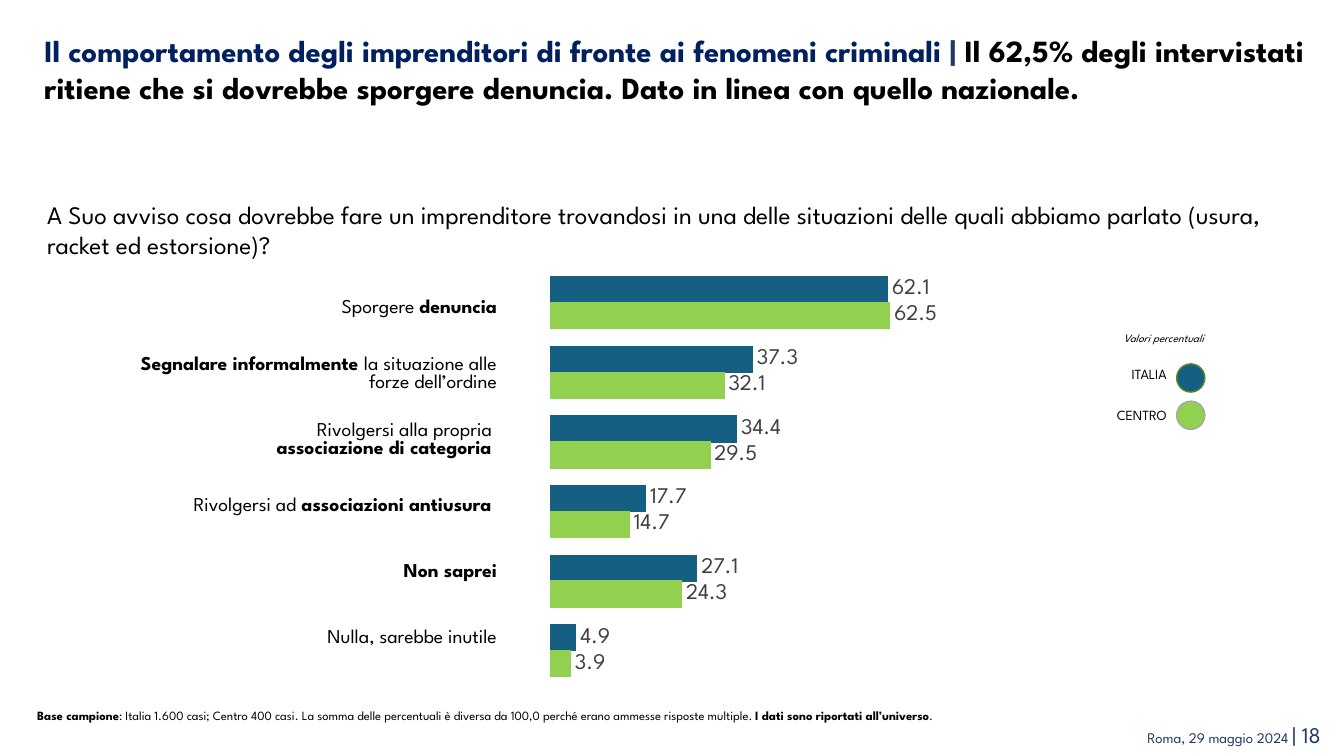
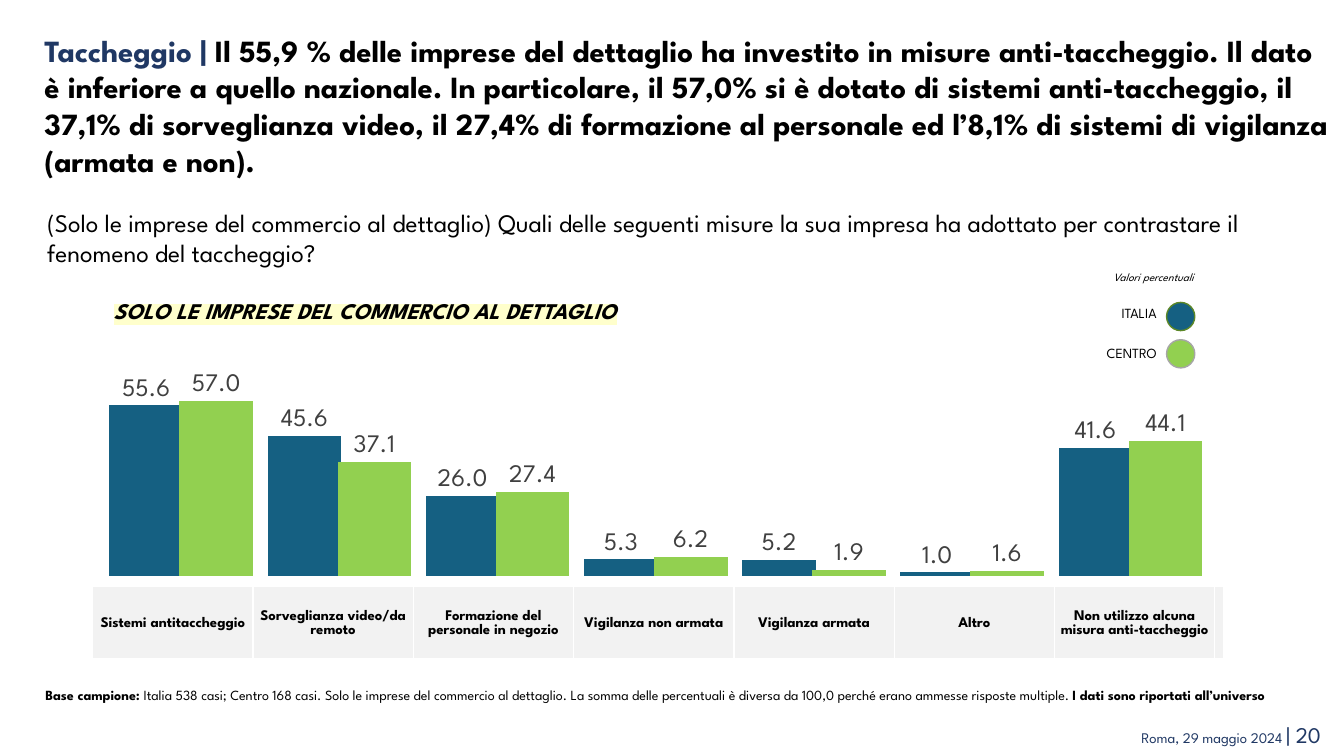
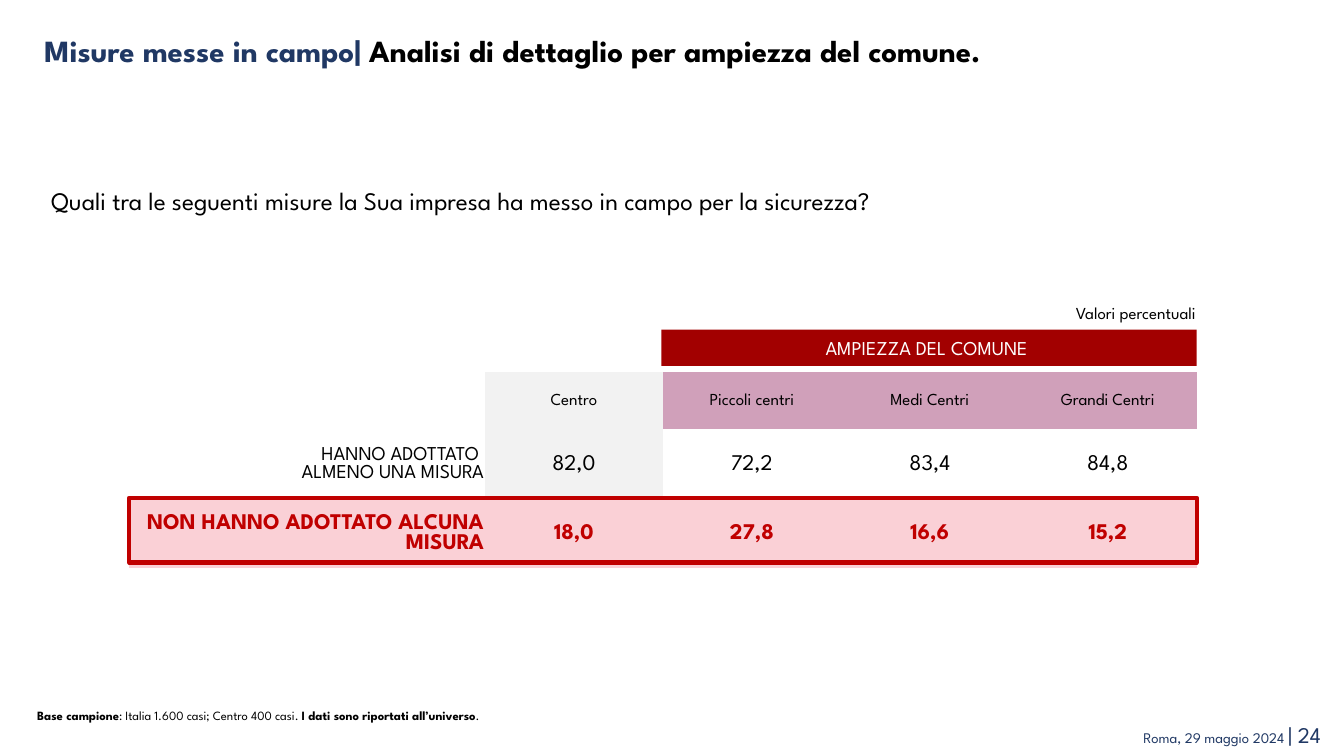
from dataclasses import dataclass
from typing import Optional

import lxml.etree
import pptx
import pptx.chart.data
import pptx.dml.color
import pptx.enum.chart
import pptx.enum.shapes
import pptx.enum.text
import pptx.oxml.ns
import pptx.util

Inches = pptx.util.Inches
ALIGN = pptx.enum.text.PP_ALIGN
MIDDLE = pptx.enum.text.MSO_ANCHOR.MIDDLE
SHAPE = pptx.enum.shapes.MSO_SHAPE
CHART = pptx.enum.chart.XL_CHART_TYPE
qn = pptx.oxml.ns.qn

# Shared style
FONT = "League Spartan"
BLACK, WHITE, NAVY, DARK_NAVY = "000000", "FFFFFF", "203864", "002060"
BLUE, GREEN, GREY, LABEL_GREY = "156082", "92D050", "F2F2F2", "404040"
RED, DARK_RED, PINK, MAUVE = "C00000", "A20000", "FAD0D6", "D0A0BA"
NO_TABLE_STYLE = "{2D5ABB26-0587-4C30-8999-92F81FD0307C}"
CELL_INSETS = (0.01, 0.01, 0.01, 0)
TITLE_INSETS = (0.07, 0.04, 0.07, 0.04)
BOX_INSETS = (0.1, 0.05, 0.1, 0.05)


@dataclass
class Span:
    text: str
    size: float
    color: str = BLACK
    bold: bool = False
    italic: bool = False
    highlight: Optional[str] = None


@dataclass
class Frame:
    left: float
    top: float
    width: float
    height: float

    def lengths(self) -> list:
        return [Inches(v) for v in (self.left, self.top, self.width, self.height)]


@dataclass
class Cell:
    lines: list
    align: ALIGN = ALIGN.CENTER
    fill: Optional[str] = None


@dataclass
class LegendEntry:
    name: str
    fill: str
    line: str
    circle_top: float
    name_top: float


@dataclass
class BarChart:
    kind: CHART
    frame: Frame
    plot: tuple
    gap: int
    maximum: float
    label_size: float
    italy: tuple
    centre: tuple
    reverse: bool = False


LEGEND = (
    LegendEntry("ITALIA", BLUE, "5C8727", 0.37, 0.34),
    LegendEntry("CENTRO", GREEN, "A6A6A6", 0.74, 0.74),
)


# Basic helpers
def rgb(color: str) -> pptx.dml.color.RGBColor:
    return pptx.dml.color.RGBColor.from_string(color)


def paint(part, color: Optional[str]) -> None:
    if color is None:
        part.fill.background()
    else:
        part.fill.solid()
        part.fill.fore_color.rgb = rgb(color)


def set_insets(part, insets: tuple) -> None:
    part.margin_left, part.margin_top, part.margin_right, part.margin_bottom = map(Inches, insets)


def write(text_frame, lines: list, align: ALIGN, spacing: Optional[float] = None) -> None:
    for number, spans in enumerate(lines):
        para = text_frame.add_paragraph() if number else text_frame.paragraphs[0]
        para.alignment = align
        if spacing:
            para.line_spacing = spacing
        for span in spans:
            run = para.add_run()
            run.text = span.text
            font = run.font
            font.name, font.size = FONT, pptx.util.Pt(span.size)
            font.bold, font.italic = span.bold, span.italic
            font.color.rgb = rgb(span.color)
            if span.highlight:
                mark = lxml.etree.Element(qn("a:highlight"))
                lxml.etree.SubElement(mark, qn("a:srgbClr"), val=span.highlight)
                run._r.rPr.find(qn("a:solidFill")).addnext(mark)


def add_text(page, frame: Frame, spans: list, align: ALIGN = ALIGN.LEFT,
             insets: tuple = BOX_INSETS, spacing: Optional[float] = None) -> None:
    box = page.shapes.add_textbox(*frame.lengths())
    box.text_frame.word_wrap = True
    set_insets(box.text_frame, insets)
    write(box.text_frame, [spans], align, spacing)


def add_shape(page, kind: SHAPE, frame: Frame, fill: Optional[str],
              line: Optional[str] = None, weight: float = 1):
    shape = page.shapes.add_shape(kind, *frame.lengths())
    shape.shadow.inherit = False
    paint(shape, fill)
    if line:
        shape.line.color.rgb = rgb(line)
        shape.line.width = pptx.util.Pt(weight)
    else:
        shape.line.fill.background()
    return shape


def add_borders(cell, color: str, weights: dict) -> None:
    properties = cell._tc.get_or_add_tcPr()
    for position, (side, weight) in enumerate(weights.items()):
        line = lxml.etree.Element(qn(f"a:ln{side}"), w=str(pptx.util.Pt(weight)))
        fill = lxml.etree.SubElement(line, qn("a:solidFill"))
        lxml.etree.SubElement(fill, qn("a:srgbClr"), val=color)
        properties.insert(position, line)


def add_table(page, frame: Frame, widths: list, heights: list, rows: list,
              insets: tuple = CELL_INSETS):
    table = page.shapes.add_table(len(rows), len(widths), *frame.lengths()).table
    table.first_row = table.horz_banding = False
    table._tbl.tblPr.find(qn("a:tableStyleId")).text = NO_TABLE_STYLE
    for column, width in zip(table.columns, widths):
        column.width = Inches(width)
    for row, height in zip(table.rows, heights):
        row.height = Inches(height)
    for row, contents in zip(table.rows, rows):
        for cell, content in zip(row.cells, contents):
            cell.vertical_anchor = MIDDLE
            set_insets(cell, insets)
            paint(cell, content.fill)
            write(cell.text_frame, content.lines, content.align)
    return table


# Parts the slides share
def add_page(deck, number: int, title: list, title_height: float, question: str,
             question_left: float, question_top: float):
    page = deck.slides.add_slide(deck.slide_layouts[6])
    add_text(page, Frame(6.27, 7.11, 6.93, 0.37),
             [Span("Roma, 29 maggio 2024 ", 10.5, NAVY), Span(f"| {number}", 16, NAVY)], ALIGN.RIGHT)
    add_text(page, Frame(0.37, 0.27, 12.91, title_height),
             [Span(text, 22, color, True) for text, color in title], insets=TITLE_INSETS)
    add_text(page, Frame(question_left, question_top, 12.67, 0.71), [Span(question, 18)])
    return page


def add_base_note(page, detail: str, ending: str) -> None:
    add_text(page, Frame(0.27, 6.96, 12.55, 0.25),
             [Span("Base campione", 9, bold=True), Span(detail, 9),
              Span("I dati sono riportati all’universo", 9, bold=True), Span(ending, 9)],
             ALIGN.JUSTIFY, spacing=1.1)


def add_legend(page, left: float, top: float) -> None:
    add_text(page, Frame(left, top, 1.95, 0.24),
             [Span("Valori percentuali", 8, italic=True)], ALIGN.RIGHT)
    for entry in LEGEND:
        add_shape(page, SHAPE.OVAL, Frame(left + 1.58, top + entry.circle_top, 0.28, 0.28),
                  entry.fill, entry.line)
        add_text(page, Frame(left + 0.12, top + entry.name_top, 1.46, 0.27),
                 [Span(entry.name, 10)], ALIGN.RIGHT)


def set_plot_area(chart, plot: tuple) -> None:
    area = chart._chartSpace.chart.plotArea
    layout = area.find(qn("c:layout"))
    if layout is None:
        layout = lxml.etree.Element(qn("c:layout"))
        area.insert(0, layout)
    manual = lxml.etree.SubElement(layout, qn("c:manualLayout"))
    settings = [("layoutTarget", "inner"), ("xMode", "edge"), ("yMode", "edge")]
    for name, value in settings + list(zip("xywh", plot)):
        lxml.etree.SubElement(manual, qn(f"c:{name}"), val=str(value))


def add_bar_chart(page, spec: BarChart) -> None:
    data = pptx.chart.data.CategoryChartData(number_format="0.0")
    data.categories = [str(i + 1) for i in range(len(spec.italy))]
    data.add_series("Italia", spec.italy)
    data.add_series("Centro", spec.centre)
    chart = page.shapes.add_chart(spec.kind, *spec.frame.lengths(), data).chart
    chart.has_legend = chart.has_title = False
    chart.font.name, chart.font.size = "Arial", pptx.util.Pt(10)
    chart.font.color.rgb = rgb(BLACK)
    chart.category_axis.reverse_order = spec.reverse
    chart.value_axis.minimum_scale = 0
    chart.value_axis.maximum_scale = spec.maximum
    chart.value_axis.has_major_gridlines = False
    chart.category_axis.visible = chart.value_axis.visible = False
    bars = chart.plots[0]
    bars.gap_width, bars.overlap, bars.vary_by_categories = spec.gap, 5, False
    for series, color in zip(bars.series, (BLUE, GREEN)):
        paint(series.format, color)
        labels = series.data_labels
        labels.show_value = True
        labels.position = pptx.enum.chart.XL_LABEL_POSITION.OUTSIDE_END
        labels.number_format, labels.number_format_is_linked = "0.0", False
        labels.font.name, labels.font.size = FONT, pptx.util.Pt(spec.label_size)
        labels.font.color.rgb = rgb(LABEL_GREY)
    set_plot_area(chart, spec.plot)


# Slide 18: reporting to the police
def build_reporting(deck) -> None:
    page = add_page(
        deck, 18,
        [("Il comportamento degli imprenditori di fronte ai fenomeni criminali ", DARK_NAVY), ("|", NAVY),
         (" Il 62,5% degli intervistati ritiene che si dovrebbe sporgere denuncia. "
          "Dato in linea con quello nazionale.", BLACK)], 1.19,
        "A Suo avviso cosa dovrebbe fare un imprenditore trovandosi in una delle situazioni "
        "delle quali abbiamo parlato (usura, racket ed estorsione)?", 0.37, 1.93)
    answers = [
        [[("Sporgere ", False), ("denuncia", True)]],
        [[("Segnalare informalmente ", True), ("la situazione alle forze dell’ordine", False)]],
        [[("Rivolgersi alla propria ", False)], [("associazione di categoria ", True)]],
        [[("Rivolgersi ad ", False), ("associazioni antiusura ", True)]],
        [[("Non saprei", True)]],
        [[("Nulla, sarebbe inutile", False)]],
    ]
    rows = [[Cell([[Span(text, 14, bold=bold) for text, bold in line] for line in answer], ALIGN.RIGHT)]
            for answer in answers]
    height = 3.93
    add_table(page, Frame(1.36, 2.74, 3.57, height), [3.57], [height / len(rows)] * len(rows),
              rows, (0, 0, 0, 0))
    add_legend(page, 10.09, 3.24)
    add_base_note(page, ": Italia 1.600 casi; Centro 400 casi. La somma delle percentuali è diversa "
                  "da 100,0 perché erano ammesse risposte multiple. ", ".")
    add_bar_chart(page, BarChart(
        CHART.BAR_CLUSTERED, Frame(4.91, 2.25, 7.14, 4.96), (0.076, 0.082, 0.53, 0.836), 60, 70, 16,
        (62.1, 37.3, 34.4, 17.7, 27.1, 4.9), (62.5, 32.1, 29.5, 14.7, 24.3, 3.9), True))


# Slide 20: shoplifting
def build_shoplifting(deck) -> None:
    page = add_page(
        deck, 20,
        [("Taccheggio |", NAVY),
         (" Il 55,9 % delle imprese del dettaglio ha investito in misure anti-taccheggio. Il dato è "
          "inferiore a quello nazionale. In particolare, il 57,0% si è dotato di sistemi "
          "anti-taccheggio, il 37,1% di sorveglianza video, il 27,4% di formazione al personale "
          "ed l’8,1% di sistemi di vigilanza (armata e non).", BLACK)], 1.56,
        "(Solo le imprese del commercio al dettaglio) Quali delle seguenti misure la sua impresa "
        "ha adottato per contrastare il fenomeno del taccheggio?", 0.37, 2.01)
    measures = ["Sistemi antitaccheggio", "Sorveglianza video/da remoto",
                "Formazione del personale in negozio", "Vigilanza non armata", "Vigilanza armata",
                "Altro", "Non utilizzo alcuna misura anti-taccheggio"]
    cells = [Cell([[Span(name, 10.5, bold=True)]], fill=GREY) for name in measures]
    table = add_table(page, Frame(0.92, 5.82, 11.21, 0.73), [1.59] * len(measures) + [0.09], [0.73],
                      [cells + [Cell([], fill=GREY)]])
    for cell in table.iter_cells():
        add_borders(cell, WHITE, {"L": 1, "R": 1, "T": 1, "B": 3})
    add_text(page, Frame(0.37, 6.76, 12.54, 0.44),
             [Span("Base campione: ", 10, bold=True),
              Span("Italia 538 casi; Centro 168 casi. Solo le imprese del commercio al dettaglio. "
                   "La somma delle percentuali è diversa da 100,0 perché erano ammesse risposte "
                   "multiple. ", 10),
              Span("I dati sono riportati all’universo", 10, bold=True)],
             insets=(0.08, 0.05, 0.08, 0.05))
    add_text(page, Frame(1.03, 2.9, 7.57, 0.35),
             [Span("SOLO LE IMPRESE DEL COMMERCIO AL DETTAGLIO", 16, BLACK, True, True, "FFFFCC")])
    add_legend(page, 9.99, 2.63)
    add_bar_chart(page, BarChart(
        CHART.COLUMN_CLUSTERED, Frame(0.76, 3.35, 11.49, 2.94), (0.022, 0.183, 0.956, 0.62), 20, 60, 18,
        (55.6, 45.6, 26.0, 5.3, 5.2, 1.0, 41.6), (57.0, 37.1, 27.4, 6.2, 1.9, 1.6, 44.1)))


# Slide 24: measures by size of town
def build_town_size(deck) -> None:
    page = add_page(
        deck, 24,
        [("Misure messe in campo|", NAVY), (" Analisi di dettaglio per ampiezza del comune.", BLACK)], 0.45,
        "Quali tra le seguenti misure la Sua impresa ha messo in campo per la sicurezza?", 0.41, 1.79)
    band = add_shape(page, SHAPE.RECTANGLE, Frame(6.56, 3.27, 5.31, 0.36), DARK_RED)
    band.text_frame.vertical_anchor = MIDDLE
    write(band.text_frame, [[Span("AMPIEZZA DEL COMUNE ", 14, WHITE)]], ALIGN.CENTER)

    header = [Cell([], fill=WHITE)] + [
        Cell([[Span(name, 12)]], fill=fill)
        for name, fill in (("Centro", GREY), ("Piccoli centri", MAUVE),
                           ("Medi Centri", MAUVE), ("Grandi Centri", MAUVE))]
    adopted = [Cell([[Span("HANNO ADOTTATO ", 14)], [Span("ALMENO UNA MISURA", 14)]], ALIGN.RIGHT)] + [
        Cell([[Span(value, 16)]], fill=fill)
        for value, fill in (("82,0", GREY), ("72,2", None), ("83,4", None), ("84,8", None))]
    none_adopted = [
        Cell([[Span(text, 16, RED, True)]], align, PINK)
        for text, align in [("NON HANNO ADOTTATO ALCUNA MISURA", ALIGN.RIGHT)]
        + [(value, ALIGN.CENTER) for value in ("18,0", "27,8", "16,6", "15,2")]]
    add_table(page, Frame(1.28, 3.69, 10.59, 1.95), [3.53] + [1.765] * 4, [0.57, 0.69, 0.69],
              [header, adopted, none_adopted])

    add_text(page, Frame(9.81, 2.95, 2.15, 0.3), [Span("Valori percentuali", 12)], ALIGN.RIGHT)
    add_shape(page, SHAPE.RECTANGLE, Frame(1.28, 4.94, 10.59, 0.64), None, RED, 3)
    add_base_note(page, ": Italia 1.600 casi; Centro 400 casi. ", ".")


def main() -> None:
    deck = pptx.Presentation()
    deck.slide_width, deck.slide_height = Inches(13.33), Inches(7.5)
    build_reporting(deck)
    build_shoplifting(deck)
    build_town_size(deck)
    deck.save("out.pptx")


if __name__ == "__main__":
    main()
